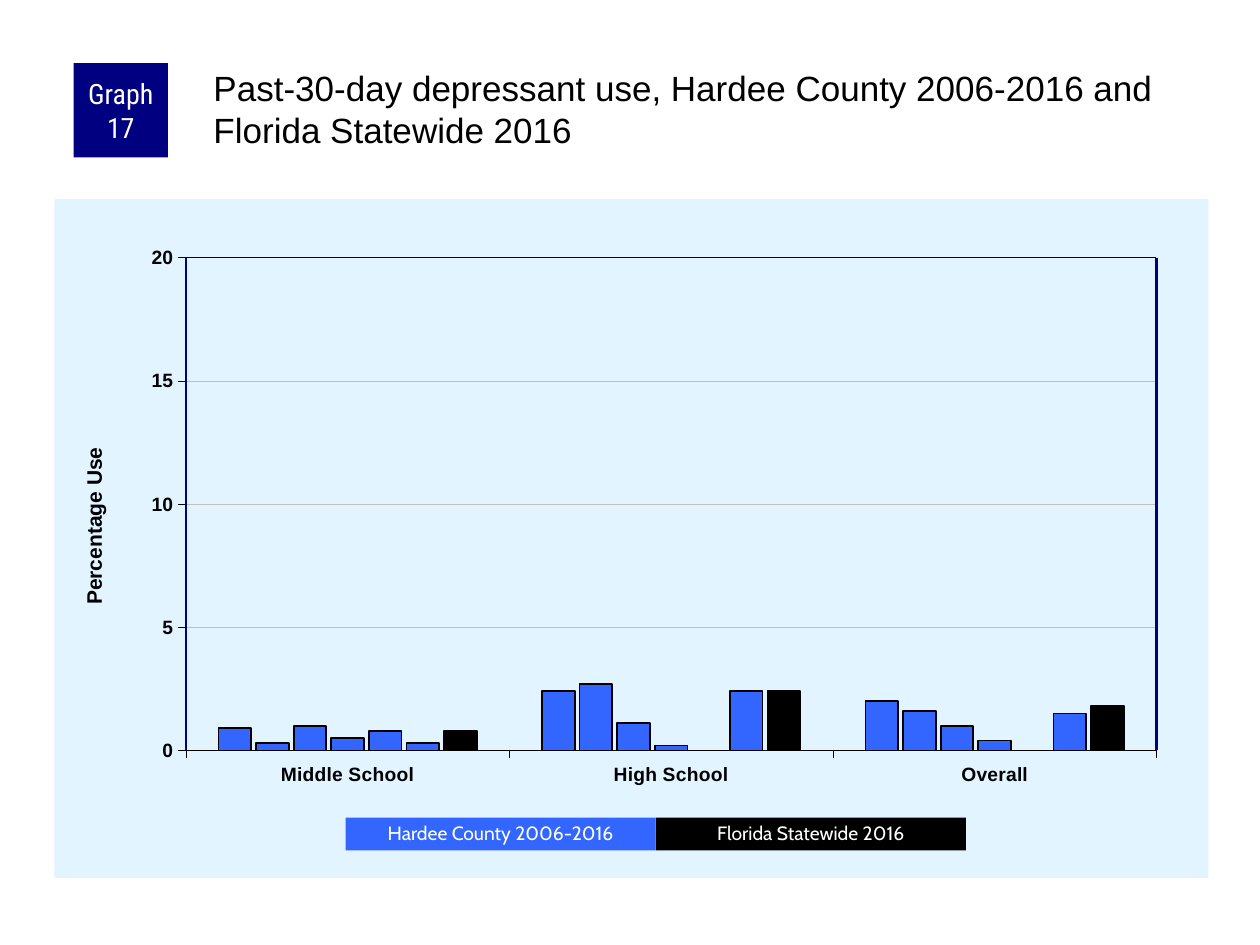
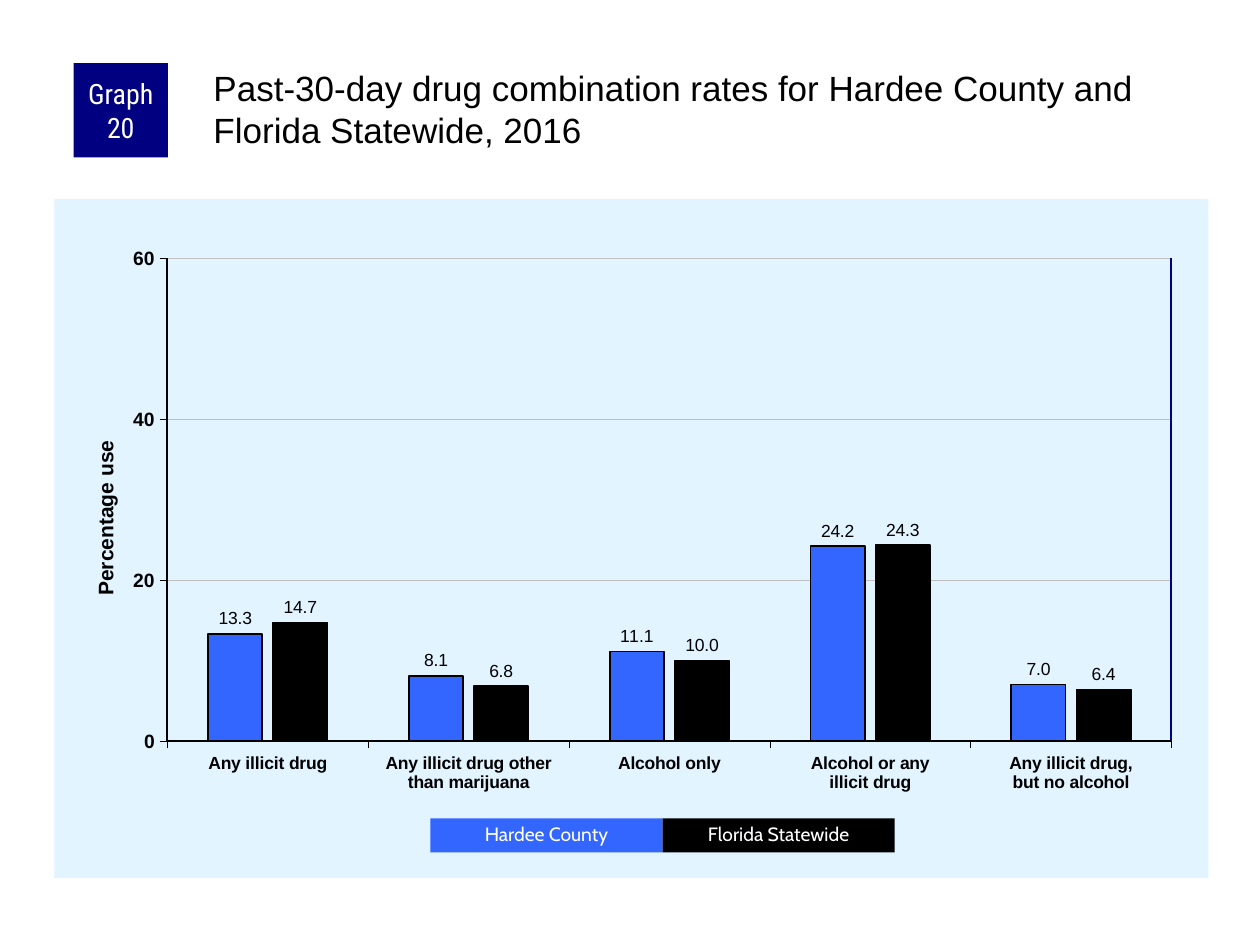
from lxml import etree
from pptx import Presentation
from pptx import util as u
from pptx.chart.data import CategoryChartData
from pptx.dml.color import RGBColor
from pptx.enum import chart as ch, shapes, text
from pptx.oxml import parse_xml
from pptx.oxml.ns import nsdecls, qn

Pt = u.Pt
COLORS = {
    "navy": "000080", "blue": "3366FF", "black": "000000",
    "white": "FFFFFF", "panel": "E1F4FF", "grid": "C0C0C0",
}
BADGE_BOX = (42, 36, 54, 54)
TITLE_BOX = (120, 36, 570, 60)
CHART_BOX = (31, 113.8, 659.5, 388)


def rgb(name):
    return RGBColor.from_string(COLORS[name])


def set_font(font, size, color="black", name="Arial", bold=False):
    font.size = Pt(size)
    font.name = name
    font.bold = bold
    font.color.rgb = rgb(color)


def set_line(line, color, width):
    line.color.rgb = rgb(color)
    line.width = Pt(width)


def write(tf, words, align=text.PP_ALIGN.LEFT, anchor=text.MSO_ANCHOR.TOP,
          insets=(0, 0, 0, 0), spacing=1.0, **font):
    tf.word_wrap = True
    tf.vertical_anchor = anchor
    tf.margin_left, tf.margin_top, tf.margin_right, tf.margin_bottom = map(Pt, insets)
    p = tf.paragraphs[0]
    p.alignment = align
    p.line_spacing = spacing
    r = p.add_run()
    r.text = words
    set_font(r.font, **font)


def add_label(s, box, fill, words, **fmt):
    sp = s.shapes.add_shape(shapes.MSO_SHAPE.RECTANGLE, *map(Pt, box))
    sp.shadow.inherit = False
    sp.fill.solid()
    sp.fill.fore_color.rgb = rgb(fill)
    sp.line.fill.background()
    write(sp.text_frame, words, align=text.PP_ALIGN.CENTER,
          anchor=text.MSO_ANCHOR.MIDDLE, color="white", **fmt)


def add_header(s, number, title):
    add_label(s, BADGE_BOX, "navy", f"Graph {number}", size=16,
              name="Roboto Condensed", insets=(3.6, 0, 3.6, 0))
    tb = s.shapes.add_textbox(*map(Pt, TITLE_BOX))
    write(tb.text_frame, title, size=20, insets=(2, 2, 0, 0))


def add_legend(s, box, names):
    x, y, w, h = box
    step = w / len(names)
    for i, (name, fill) in enumerate(zip(names, ("blue", "black"))):
        add_label(s, (x + i * step, y, step, h), fill, name,
                  size=11, name="Cabin", spacing=0.9)


def make_layout(x, y, w=None, h=None):
    layout = parse_xml(f"<c:layout {nsdecls('c')}><c:manualLayout/></c:layout>")
    parts = [("xMode", "edge"), ("yMode", "edge"), ("x", x), ("y", y)]
    if w:
        parts = [("layoutTarget", "inner")] + parts + [("w", w), ("h", h)]
    for tag, val in parts:
        etree.SubElement(layout[0], qn(f"c:{tag}")).set("val", str(val))
    return layout


def place(parent, index, layout):
    for old in parent.findall(qn("c:layout")):
        parent.remove(old)
    parent.insert(index, layout)


def style_axis(axis, size):
    set_font(axis.tick_labels.font, size, bold=True)
    set_line(axis.format.line, "black", 0.25)
    axis.major_tick_mark = ch.XL_TICK_MARK.OUTSIDE
    axis.minor_tick_mark = ch.XL_TICK_MARK.NONE


def style_value_axis(axis, top, step, title, title_at):
    style_axis(axis, 11)
    axis.minimum_scale, axis.maximum_scale, axis.major_unit = 0, top, step
    axis.tick_labels.number_format = "0"
    axis.tick_labels.number_format_is_linked = False
    axis.has_major_gridlines = True
    set_line(axis.major_gridlines.format.line, "grid", 0.25)
    tf = axis.axis_title.text_frame
    r = tf.paragraphs[0].add_run()
    r.text = title
    set_font(r.font, 12, bold=True)
    body = tf._txBody.bodyPr
    body.set("rot", "-5400000")
    body.set("vert", "horz")
    place(axis.axis_title._element, 1, make_layout(*title_at))


def style_series(series, color, labelled):
    series.format.fill.solid()
    series.format.fill.fore_color.rgb = rgb(color)
    series.invert_if_negative = False
    set_line(series.format.line, "black", 1)
    if labelled:
        labels = series.data_labels
        labels.show_value = True
        labels.number_format = "0.0"
        labels.number_format_is_linked = False
        labels.position = ch.XL_LABEL_POSITION.OUTSIDE_END
        set_font(labels.font, 10)


def add_frame(s, box, plot, edges):
    x, y, w, h = box
    left, top = x + plot[0] * w, y + plot[1] * h
    right, bottom = left + plot[2] * w, top + plot[3] * h
    ends = {
        "left": (left, top, left, bottom), "right": (right, top, right, bottom),
        "top": (left, top, right, top), "bottom": (left, bottom, right, bottom),
    }
    for edge, (color, width) in edges.items():
        cn = s.shapes.add_connector(shapes.MSO_CONNECTOR.STRAIGHT, *map(Pt, ends[edge]))
        set_line(cn.line, color, width)
        etree.SubElement(cn._element.spPr, qn("a:effectLst"))


def add_columns(s, box, cats, rows, plot, gap, overlap, cat_size,
                top, step, title, title_at, edges, labelled=False):
    data = CategoryChartData()
    data.categories = cats
    for i, row in enumerate(rows, 1):
        data.add_series(f"Series {i}", row)
    chart = s.shapes.add_chart(ch.XL_CHART_TYPE.COLUMN_CLUSTERED, *map(Pt, box), data).chart
    chart.has_legend = False
    chart.has_title = False
    set_font(chart.font, 10)
    space = chart._chartSpace
    space.find(qn("c:chart")).addnext(parse_xml(
        f"<c:spPr {nsdecls('c', 'a')}><a:solidFill><a:srgbClr val='{COLORS['panel']}'/>"
        "</a:solidFill><a:ln><a:noFill/></a:ln></c:spPr>"))
    place(space.find(f".//{qn('c:plotArea')}"), 0, make_layout(*plot))
    bars = chart.plots[0]
    bars.vary_by_categories = False
    bars.gap_width, bars.overlap = gap, overlap
    for i, series in enumerate(bars.series, 1):
        style_series(series, "black" if i == len(rows) else "blue", labelled)
    style_axis(chart.category_axis, cat_size)
    style_value_axis(chart.value_axis, top, step, title, title_at)
    add_frame(s, box, plot, edges)


def add_graph_slide(prs, number, title, columns, legend_box, legend):
    s = prs.slides.add_slide(prs.slide_layouts[6])
    add_columns(s, CHART_BOX, **columns)
    add_header(s, number, title)
    add_legend(s, legend_box, legend)


DEPRESSANTS = dict(
    cats=["Middle School", "High School", "Overall"],
    rows=[(0.9, 2.4, 2), (0.3, 2.7, 1.6), (1, 1.1, 1), (0.5, 0.2, 0.4),
          (0.8, 0, 0), (0.3, 2.4, 1.5), (0.8, 2.4, 1.8)],
    plot=(0.114, 0.086, 0.841, 0.726), gap=200, overlap=-15, cat_size=11,
    top=20, step=5, title="Percentage Use", title_at=(0.02, 0.36),
    edges={"left": ("navy", 1.25), "right": ("navy", 1.25), "top": ("black", 0.75)},
)
COMBINATIONS = dict(
    cats=["Any illicit drug", "Any illicit drug other than marijuana", "Alcohol only",
          "Alcohol or any\nillicit drug", "Any illicit drug,\nbut no alcohol"],
    rows=[(13.3, 8.1, 11.1, 24.2, 7), (14.7, 6.8, 10, 24.3, 6.4)],
    plot=(0.098, 0.087, 0.87, 0.711), gap=150, overlap=-20, cat_size=10,
    top=60, step=20, title="Percentage use", title_at=(0.03, 0.35),
    edges={"left": ("black", 1.25), "right": ("navy", 1.25), "bottom": ("black", 1.25)},
    labelled=True,
)


def main():
    prs = Presentation()
    prs.slide_width, prs.slide_height = Pt(720), Pt(540)
    add_graph_slide(
        prs, 17,
        "Past-30-day depressant use, Hardee County 2006-2016 and Florida Statewide 2016",
        DEPRESSANTS, (197.5, 467.3, 354.5, 18.7),
        ("Hardee County 2006-2016", "Florida Statewide 2016"))
    add_graph_slide(
        prs, 20,
        "Past-30-day drug combination rates for Hardee County and Florida Statewide, 2016",
        COMBINATIONS, (246, 467.7, 265.3, 19.5),
        ("Hardee County", "Florida Statewide"))
    prs.save("out.pptx")


if __name__ == "__main__":
    main()
